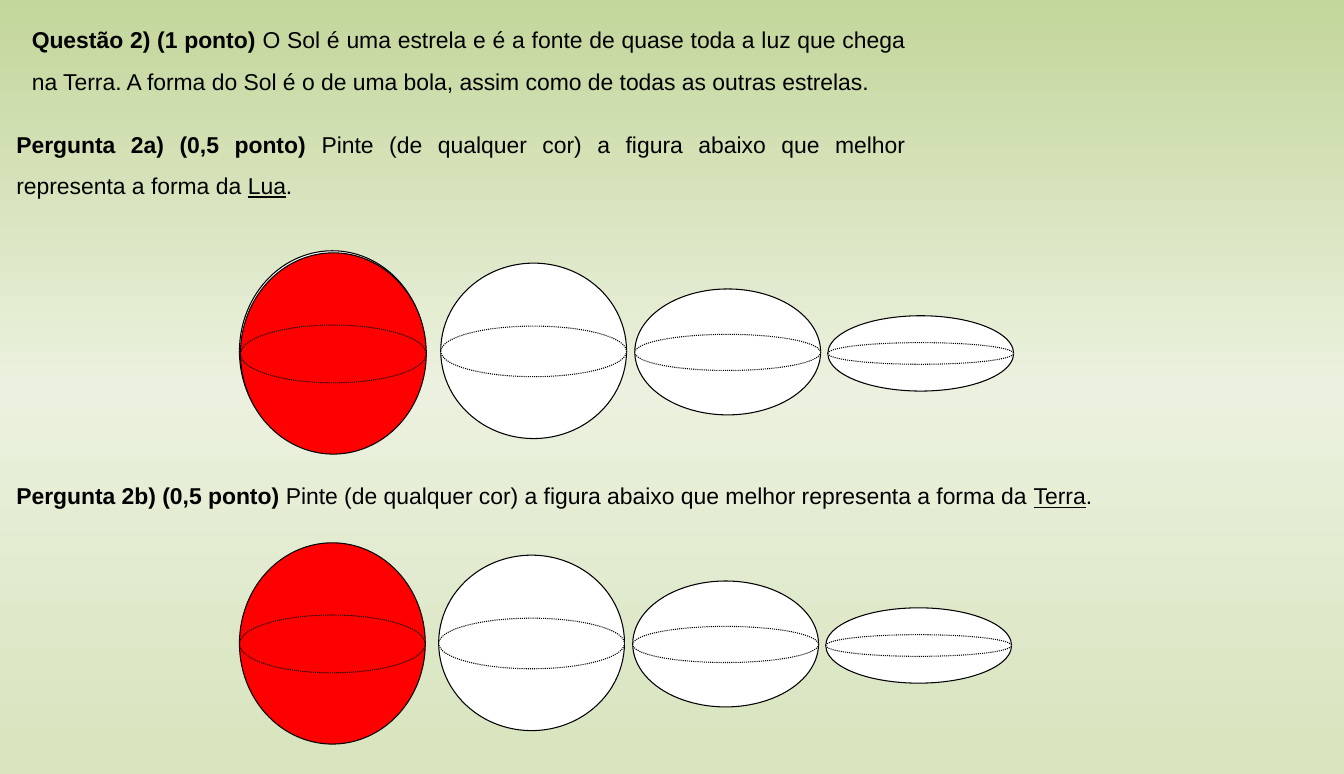
from copy import deepcopy

from pptx import Presentation
from pptx.dml.color import RGBColor
from pptx.enum.dml import MSO_LINE
from pptx.enum.shapes import MSO_SHAPE
from pptx.enum.text import MSO_AUTO_SIZE, PP_ALIGN
from pptx.oxml.ns import qn
from pptx.util import Emu, Pt

ELLIPSE = MSO_SHAPE.OVAL
DOTTED = MSO_LINE.ROUND_DOT
JUSTIFY = PP_ALIGN.JUSTIFY
GROW = MSO_AUTO_SIZE.SHAPE_TO_FIT_TEXT
SCALE = 9144  # 100 px to the inch
BLACK, WHITE, RED = "000000", "FFFFFF", "FF0000"


def px(n):
    return Emu(n * SCALE)


def rgb(color):
    return RGBColor.from_string(color)


class Quiz:
    font, size, line_width = "Arial", Pt(16), Pt(0.75)

    def __init__(self, slide):
        self.s = slide

    def background(self, stops):
        fill = self.s.background.fill
        fill.gradient()
        fill.gradient_angle = 270
        gs_list = self.s._element.find(".//" + qn("a:gsLst"))
        gs_list.append(deepcopy(gs_list[0]))
        for stop, (position, color) in zip(fill.gradient_stops, stops):
            stop.position = position
            stop.color.rgb = rgb(color)

    def text(self, x, y, w, h, runs, spacing=None):
        tf = self.s.shapes.add_textbox(px(x), px(y), px(w), px(h)).text_frame
        tf.word_wrap = True
        tf.auto_size = GROW
        p = tf.paragraphs[0]
        p.alignment = JUSTIFY
        p.line_spacing = spacing
        for content, style in runs:
            r = p.add_run()
            r.text = content
            r.font.name, r.font.size = self.font, self.size
            r.font.color.rgb = rgb(BLACK)
            r.font.bold = style == "bold"
            r.font.underline = style == "underline"

    def ellipse(self, shapes, x, y, w, h, color, dash=None):
        sp = shapes.add_shape(ELLIPSE, px(x), px(y), px(w), px(h))
        sp.shadow.inherit = False
        sp.fill.solid()
        sp.fill.fore_color.rgb = rgb(color)
        sp.line.color.rgb = rgb(BLACK)
        sp.line.width = self.line_width
        if dash:
            sp.line.dash_style = dash

    def globe(self, x, y, h, equator, color=WHITE, grouped=False):
        shapes = self.s.shapes
        if grouped:
            shapes = shapes.add_group_shape().shapes
        self.ellipse(shapes, x, y, 180, h, color)
        self.ellipse(shapes, x, y + (h - equator + 1) // 2, 180, equator, color, DOTTED)


def main():
    prs = Presentation()
    prs.slide_width, prs.slide_height = px(1302), px(750)
    quiz = Quiz(prs.slides.add_slide(prs.slide_layouts[6]))
    quiz.background([(0, "C3D69B"), (0.5, "EBF1DE"), (1, "D7E4BD")])

    # Question and its two parts
    quiz.text(21, 7, 866, 91, [
        ("Questão 2) (1 ponto)", "bold"),
        (" O Sol é uma estrela e é a fonte de quase toda a luz que chega na Terra. "
         "A forma do Sol é o de uma bola, assim como de todas as outras estrelas.", None),
    ], 1.5)
    task = "Pinte (de qualquer cor) a figura abaixo que melhor representa a forma da "
    quiz.text(6, 108, 881, 91, [
        ("Pergunta 2a) (0,5 ponto) ", "bold"), (task, None),
        ("Lua", "underline"), (".", None),
    ], 1.5)
    quiz.text(6, 462, 1068, 37, [
        ("Pergunta 2b) (0,5 ponto)", "bold"), (" " + task, None),
        ("Terra", "underline"), (".", None),
    ])

    # Flattening globes: x and y within the row, height, equator height
    flattened = [(195, 12, 170, 49), (383, 37, 122, 35), (570, 63, 73, 21)]
    for left, top in [(232, 243), (230, 526)]:
        for x, y, h, equator in flattened:
            quiz.globe(left + x, top + y, h, equator)

    # Roundest globes, painted red as the answers
    quiz.globe(232, 243, 195, 56)
    for x, y in [(233, 245), (232, 526)]:
        quiz.globe(x, y, 195, 56, RED, grouped=True)

    prs.save("out.pptx")


if __name__ == "__main__":
    main()
